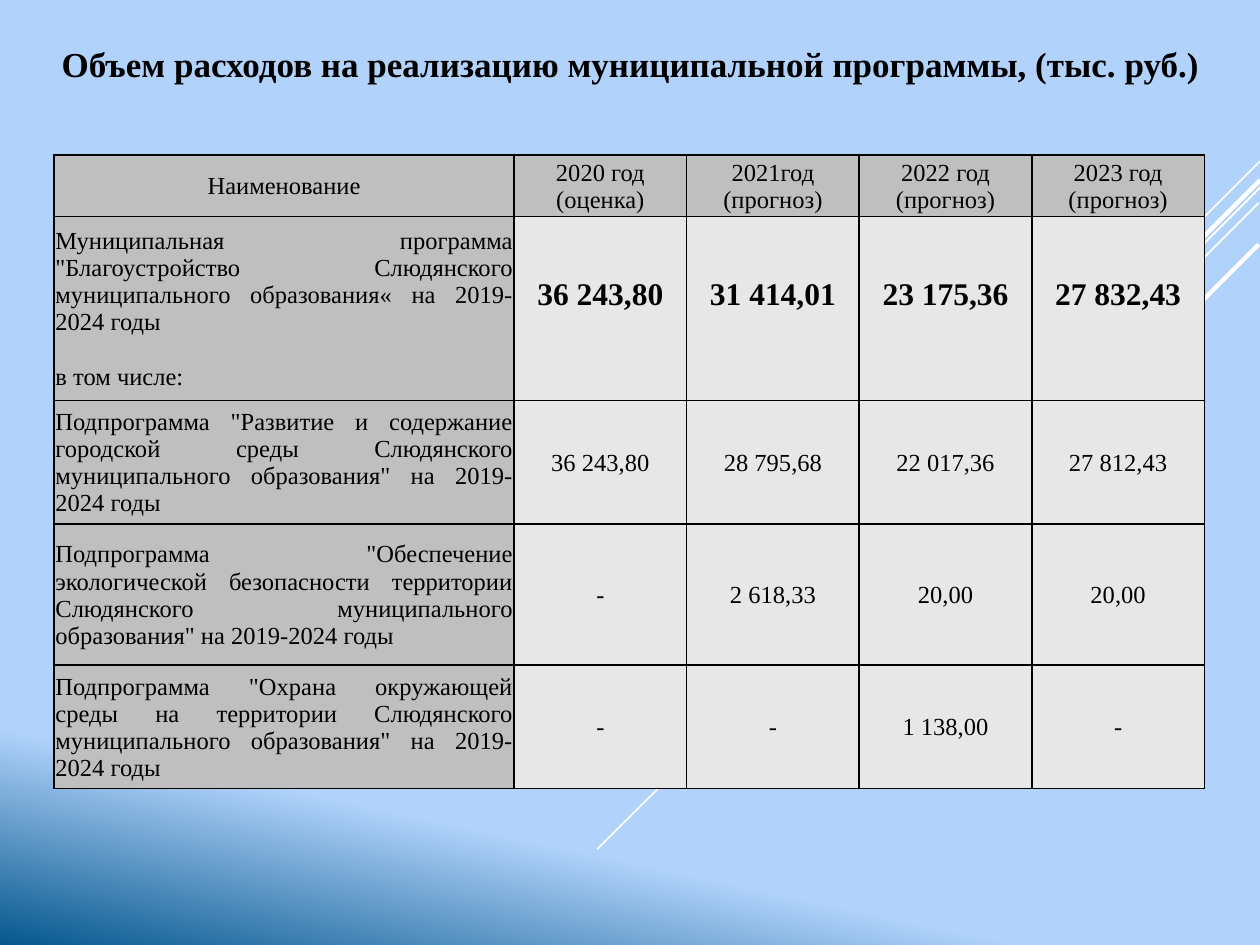
import pptx
import pptx.dml.color
import pptx.enum.shapes
import pptx.enum.text
import pptx.oxml
import pptx.oxml.ns
import pptx.util
from lxml import etree

RGBColor = pptx.dml.color.RGBColor
ALIGN = pptx.enum.text.PP_ALIGN
MIDDLE = pptx.enum.text.MSO_ANCHOR.MIDDLE

BLACK = RGBColor(0x00, 0x00, 0x00)
WHITE = RGBColor(0xFF, 0xFF, 0xFF)
SKY = RGBColor(0xB1, 0xD3, 0xFB)
DEEP_BLUE = RGBColor(0x06, 0x58, 0x8E)
GREY = RGBColor(0xBF, 0xBF, 0xBF)
LIGHT_GREY = RGBColor(0xE7, 0xE7, 0xE7)

TITLE = "Объем расходов на реализацию муниципальной программы, (тыс. руб.)"
HEADINGS = ["Наименование", "2020 год (оценка)", "2021год (прогноз)",
            "2022 год (прогноз)", "2023 год (прогноз)"]
EXPENSES = [
    ['Муниципальная программа "Благоустройство Слюдянского муниципального '
     'образования« на 2019-2024 годы\nв том числе:',
     "36 243,80", "31 414,01", "23 175,36", "27 832,43"],
    ['Подпрограмма "Развитие и содержание городской среды Слюдянского '
     'муниципального образования" на 2019-2024 годы',
     "36 243,80", "28 795,68", "22 017,36", "27 812,43"],
    ['Подпрограмма "Обеспечение экологической безопасности территории '
     'Слюдянского муниципального образования" на 2019-2024 годы',
     "-", "2 618,33", "20,00", "20,00"],
    ['Подпрограмма "Охрана окружающей среды на территории Слюдянского '
     'муниципального образования" на 2019-2024 годы',
     "-", "-", "1 138,00", "-"],
]
COLUMN_WIDTHS = [36.5] + [13.7] * 4
ROW_HEIGHTS = [4.9, 14.6, 9.8, 11.2, 9.8]
RAYS = [
    (100, 12.8, 65.7, 47.1, 1),
    (100.1, 14.8, 47.4, 67.4, 1),
    (99.9, 16.1, 57.1, 58.9, 1),
    (100, 14.3, 58, 56.3, 2.5),
    (99.9, 19.4, 62.4, 56.9, 2.5),
]


class SlidePainter:
    """Draws styled elements on a slide divided into 100 columns and 75 rows."""

    font_name = "Times New Roman"
    body_size = 14
    unit = pptx.util.Inches(0.1)

    def __init__(self, slide):
        self.slide = slide

    def grid(self, *lengths):
        return [round(length * self.unit) for length in lengths]

    def background(self, start, end, angle):
        fill = self.slide.background.fill
        fill.gradient()
        fill.gradient_angle = 360 - angle
        for stop, (position, color) in zip(fill.gradient_stops, (start, end)):
            stop.position = position
            stop.color.rgb = color

    def ray(self, x1, y1, x2, y2, width):
        ray = self.slide.shapes.add_connector(
            pptx.enum.shapes.MSO_CONNECTOR.STRAIGHT, *self.grid(x1, y1, x2, y2))
        ray.line.color.rgb = WHITE
        ray.line.width = pptx.util.Pt(width)
        etree.SubElement(ray._element.spPr, pptx.oxml.ns.qn("a:effectLst"))

    def set_text(self, frame, text, size, align, bold=False, gap=0):
        frame.word_wrap = True
        frame.text = text
        for paragraph in frame.paragraphs:
            paragraph.alignment = align
            paragraph.space_after = pptx.util.Pt(gap)
            font = paragraph.font
            font.name, font.size, font.bold = self.font_name, pptx.util.Pt(size), bold
            font.color.rgb = BLACK

    def title(self, text, left, top, width, height):
        box = self.slide.shapes.add_textbox(*self.grid(left, top, width, height))
        self.set_text(box.text_frame, text, 20, ALIGN.CENTER, bold=True)

    def border(self, cell):
        properties = cell._tc.get_or_add_tcPr()
        for position, side in enumerate(("lnL", "lnR", "lnT", "lnB")):
            properties.insert(position, pptx.oxml.parse_xml(
                f'<a:{side} {pptx.oxml.ns.nsdecls("a")} w="12700"><a:solidFill>'
                f'<a:srgbClr val="{BLACK}"/></a:solidFill></a:{side}>'))

    def cell(self, cell, text, is_heading, is_label, is_total):
        cell.fill.solid()
        cell.fill.fore_color.rgb = GREY if is_heading or is_label else LIGHT_GREY
        cell.vertical_anchor = MIDDLE
        cell.margin_left = cell.margin_right = cell.margin_top = pptx.util.Inches(0.01)
        total_value = is_total and not is_label
        cell.margin_bottom = pptx.util.Pt(16 if total_value else 0)
        self.set_text(cell.text_frame, text, 18 if total_value else self.body_size,
                      ALIGN.JUSTIFY if is_label and not is_heading else ALIGN.CENTER,
                      bold=total_value, gap=16 if is_total and is_label else 0)
        self.border(cell)

    def table(self, rows, left, top, widths, heights):
        table = self.slide.shapes.add_table(
            len(rows), len(widths),
            *self.grid(left, top, sum(widths), sum(heights))).table
        for column, width in zip(table.columns, self.grid(*widths)):
            column.width = width
        for row, height in zip(table.rows, self.grid(*heights)):
            row.height = height
        for r, texts in enumerate(rows):
            for c, text in enumerate(texts):
                self.cell(table.cell(r, c), text, r == 0, c == 0, r == 1)


def main():
    presentation = pptx.Presentation()
    presentation.slide_width = pptx.util.Inches(10)
    presentation.slide_height = pptx.util.Inches(7.5)
    painter = SlidePainter(presentation.slides.add_slide(presentation.slide_layouts[6]))
    painter.background((0.82, SKY), (1, DEEP_BLUE), 102)
    for ray in RAYS:
        painter.ray(*ray)
    painter.title(TITLE, 2.4, 2.9, 95.3, 4.4)
    painter.table([HEADINGS] + EXPENSES, 4.3, 12.3, COLUMN_WIDTHS, ROW_HEIGHTS)
    presentation.save("out.pptx")


if __name__ == "__main__":
    main()
